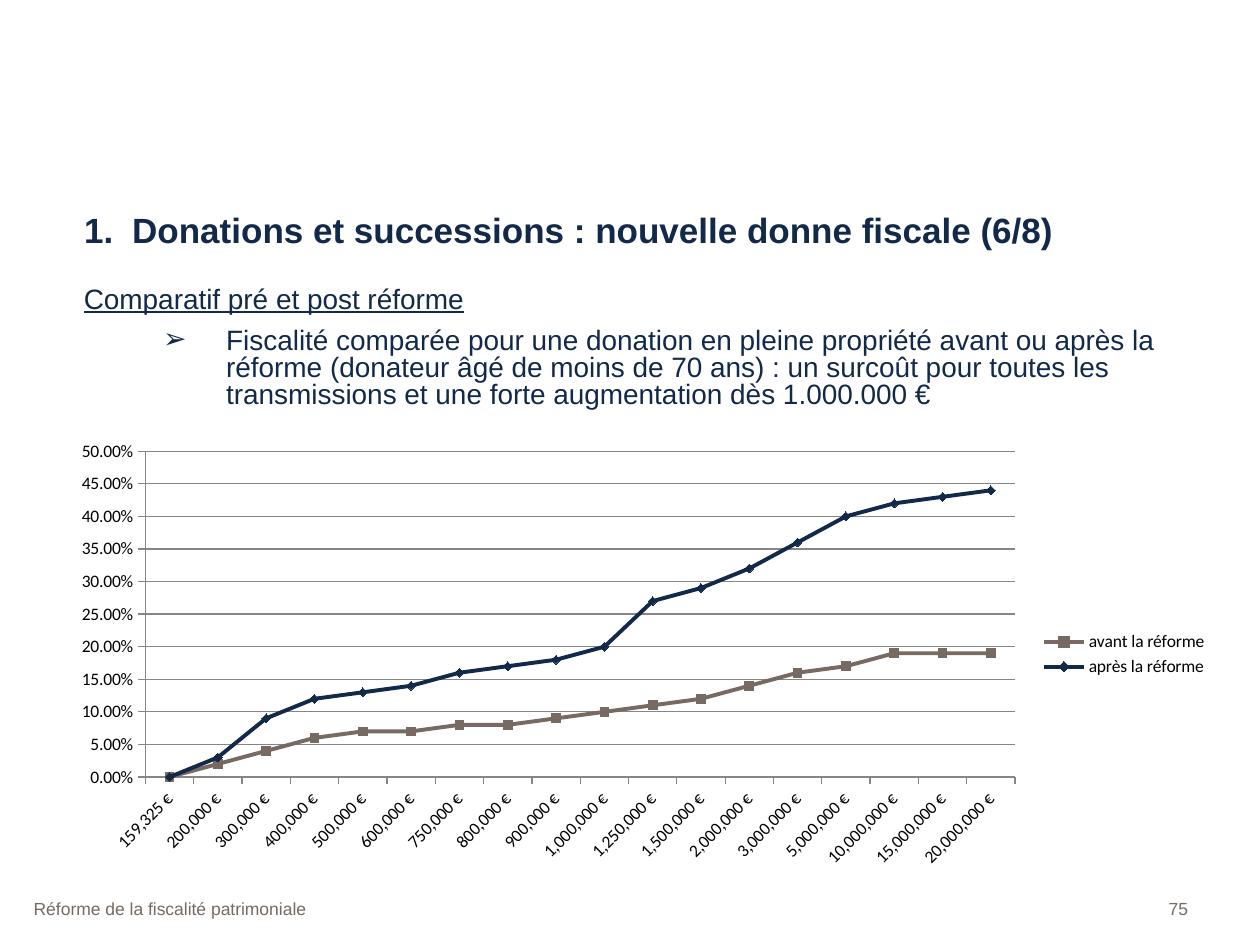
from lxml.etree import SubElement
from pptx import Presentation
from pptx.chart.data import CategoryChartData as ChartData
from pptx.dml.color import RGBColor
from pptx.enum.chart import XL_CHART_TYPE as ChartType
from pptx.enum.chart import XL_LEGEND_POSITION as LegendPosition
from pptx.enum.chart import XL_MARKER_STYLE as Marker
from pptx.enum.chart import XL_TICK_MARK as Tick
from pptx.enum.text import MSO_ANCHOR as Anchor
from pptx.enum.text import PP_ALIGN as Align
from pptx.oxml.ns import qn
from pptx.util import Cm, Pt

NAVY = RGBColor(0x13, 0x29, 0x4A)
TAUPE = RGBColor(0x76, 0x6A, 0x62)
GREY = RGBColor(0x86, 0x86, 0x86)
BLACK = RGBColor(0, 0, 0)

TITLE = "1.\tDonations et successions : nouvelle donne fiscale (6/8)"
SUBTITLE = "Comparatif pré et post réforme"
MESSAGE = (
    "Fiscalité comparée pour une donation en pleine propriété avant ou après la "
    "réforme (donateur âgé de moins de 70 ans) : un surcoût pour toutes les "
    "transmissions et une forte augmentation dès 1.000.000 €"
)
AMOUNTS = [
    159325, 200000, 300000, 400000, 500000, 600000, 750000, 800000, 900000,
    1000000, 1250000, 1500000, 2000000, 3000000, 5000000, 10000000, 15000000,
    20000000,
]
BEFORE = [
    0, 0.02, 0.04, 0.06, 0.07, 0.07, 0.08, 0.08, 0.09,
    0.1, 0.11, 0.12, 0.14, 0.16, 0.17, 0.19, 0.19, 0.19,
]
AFTER = [
    0, 0.03, 0.09, 0.12, 0.13, 0.14, 0.16, 0.17, 0.18,
    0.2, 0.27, 0.29, 0.32, 0.36, 0.4, 0.42, 0.43, 0.44,
]
SERIES = [
    ("avant la réforme", BEFORE, TAUPE, Marker.SQUARE),
    ("après la réforme", AFTER, NAVY, Marker.DIAMOND),
]
EURO_FORMAT = '#,##0 "€"'
PERCENT_FORMAT = "0.00%"


class SlideBuilder:
    text_font = "Arial"
    chart_font = "Calibri"

    def __init__(self, page):
        self.page = page

    def place(self, shape, left, top, width, height):
        shape.left, shape.top = Cm(left), Cm(top)
        shape.width, shape.height = Cm(width), Cm(height)

    def style(self, para, size, color, **options):
        for span in para.runs:
            span.font.name = self.text_font
            span.font.size = Pt(size)
            span.font.color.rgb = color
            for name, value in options.items():
                setattr(span.font, name, value)

    def indent(self, para, margin, hanging):
        properties = para._p.get_or_add_pPr()
        properties.set("marL", str(Cm(margin)))
        properties.set("indent", str(-Cm(hanging)))
        return properties

    def title(self, text, *area):
        title = self.page.shapes.title
        self.place(title, *area)
        frame = title.text_frame
        frame.text = text
        frame.word_wrap = True
        frame.vertical_anchor = Anchor.TOP
        para = frame.paragraphs[0]
        para.alignment = Align.LEFT
        properties = self.indent(para, 0.97, 0.97)
        tabs = SubElement(properties, qn("a:tabLst"))
        SubElement(tabs, qn("a:tab"), pos=str(Cm(0.97)), algn="l")
        self.style(para, 20, NAVY, bold=True)

    def text(self, text, size, color, *area, align=Align.LEFT):
        box = self.page.shapes.add_textbox(*map(Cm, area))
        frame = box.text_frame
        frame.word_wrap = True
        frame.text = text
        para = frame.paragraphs[0]
        para.alignment = align
        self.style(para, size, color)
        return frame

    def body(self, heading, message, *area):
        frame = self.text(heading, 16, NAVY, *area)
        first = frame.paragraphs[0]
        first.line_spacing = 0.9
        self.style(first, 16, NAVY, underline=True)
        para = frame.add_paragraph()
        para.text = message
        para.level = 1
        para.line_spacing = 0.8
        para.space_before = Pt(8)
        properties = self.indent(para, 2.87, 1.27)
        SubElement(properties, qn("a:buFont"), typeface=self.text_font)
        SubElement(properties, qn("a:buChar"), char="➢")
        self.style(para, 16, NAVY)

    def axis(self, axis, number_format):
        axis.major_tick_mark = Tick.OUTSIDE
        axis.minor_tick_mark = Tick.NONE
        axis.format.line.color.rgb = GREY
        axis.format.line.width = Pt(0.75)
        axis.tick_labels.number_format = number_format
        axis.tick_labels.number_format_is_linked = False

    def line_chart(self, amounts, series, *area):
        data = ChartData(number_format=PERCENT_FORMAT)
        data.categories = amounts
        data.categories.number_format = EURO_FORMAT
        for name, values, _, _ in series:
            data.add_series(name, values)
        chart = self.page.shapes.add_chart(
            ChartType.LINE_MARKERS, *map(Cm, area), data
        ).chart
        chart.has_title = False
        chart.font.name = self.chart_font
        chart.font.size = Pt(10)
        chart.font.color.rgb = BLACK
        chart.has_legend = True
        chart.legend.position = LegendPosition.RIGHT
        chart.legend.include_in_layout = False
        self.axis(chart.category_axis, EURO_FORMAT)
        self.axis(chart.value_axis, PERCENT_FORMAT)
        chart.value_axis.minimum_scale = 0
        chart.value_axis.maximum_scale = 0.5
        chart.value_axis.major_unit = 0.05
        chart.value_axis.has_major_gridlines = True
        grid = chart.value_axis.major_gridlines.format.line
        grid.color.rgb = GREY
        grid.width = Pt(0.75)
        plot = chart.plots[0]
        plot.vary_by_categories = False
        for line, (_, _, color, symbol) in zip(plot.series, series):
            line.smooth = False
            line.format.line.color.rgb = color
            line.format.line.width = Pt(2.25)
            line.marker.style = symbol
            line.marker.size = 5
            line.marker.format.fill.solid()
            line.marker.format.fill.fore_color.rgb = color
            line.marker.format.line.color.rgb = color


def main():
    deck = Presentation()
    deck.slide_width, deck.slide_height = Cm(25.4), Cm(19.05)
    builder = SlideBuilder(deck.slides.add_slide(deck.slide_layouts[5]))
    builder.title(TITLE, 1.44, 4.08, 22.76, 1.2)
    builder.body(SUBTITLE, MESSAGE, 1.44, 5.62, 22.76, 11.4)
    builder.text("75", 10, TAUPE, 22.63, 17.98, 1.57, 1.07, align=Align.RIGHT)
    builder.text(
        "Réforme de la fiscalité patrimoniale", 10, TAUPE, 0.43, 17.98, 21.54, 1.07
    )
    builder.line_chart(AMOUNTS, SERIES, 1.18, 8.72, 23.42, 8.94)
    deck.save("out.pptx")


if __name__ == "__main__":
    main()
